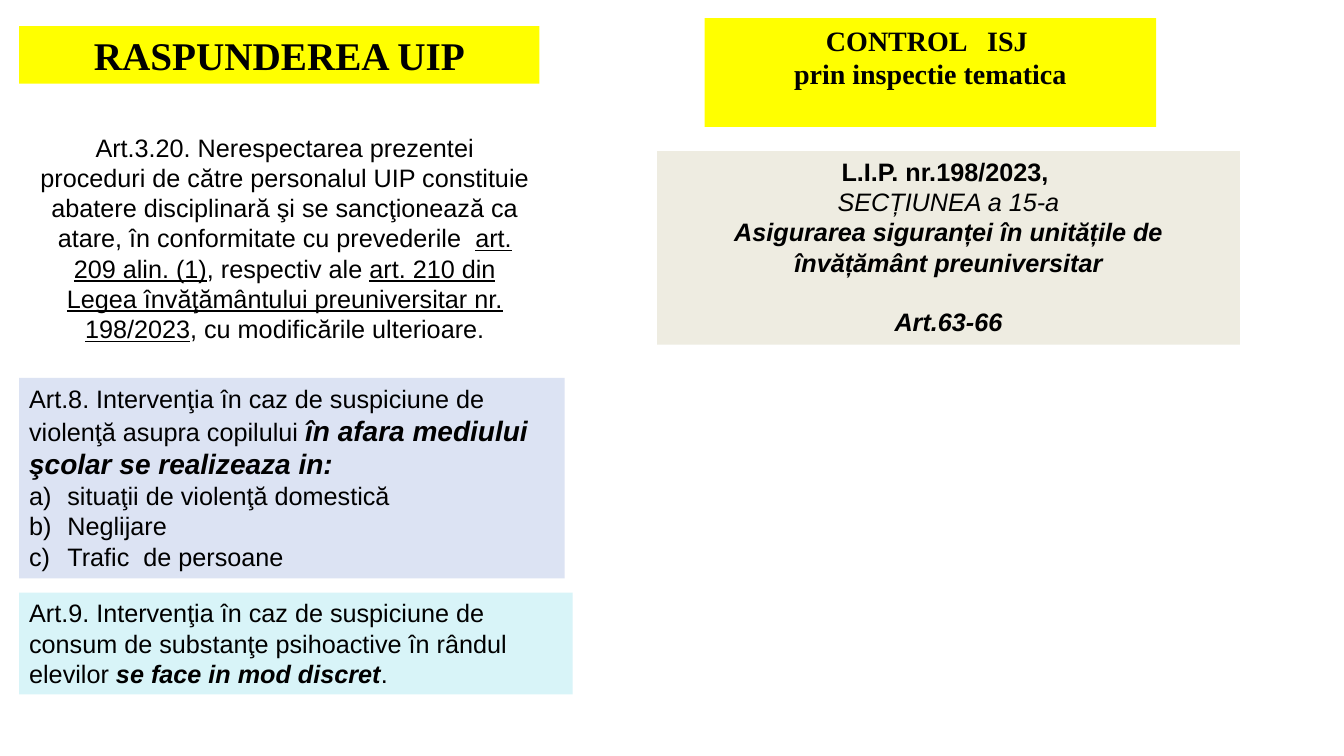
from dataclasses import dataclass

from lxml.etree import SubElement
from pptx import Presentation
from pptx.dml.color import RGBColor
from pptx.enum.shapes import MSO_AUTO_SHAPE_TYPE as ShapeType
from pptx.enum.text import MSO_ANCHOR as Anchor, PP_ALIGN as Align
from pptx.oxml.ns import qn
from pptx.util import Inches, Pt

BLACK = RGBColor(0x00, 0x00, 0x00)
WHITE = RGBColor(0xFF, 0xFF, 0xFF)
YELLOW = RGBColor(0xFF, 0xFF, 0x00)
BEIGE = RGBColor(0xEE, 0xEC, 0xE1)
LAVENDER = RGBColor(0xDC, 0xE3, 0xF3)
AQUA = RGBColor(0xD8, 0xF4, 0xF8)

BODY = {"name": "Arial", "size": Pt(18)}
TITLE = {"name": "Times New Roman", "size": Pt(28), "bold": True}
SUBTITLE = TITLE | {"size": Pt(20)}
BOLD = BODY | {"bold": True}
ITALIC = BODY | {"italic": True}
STRONG = BOLD | ITALIC
LARGE_STRONG = STRONG | {"size": Pt(20)}
UNDERLINED = BODY | {"underline": True}

LEFT_MARGIN = 1.43
LIST_INDENT = Inches(0.38)


@dataclass(frozen=True)
class Run:
    text: str
    style: dict


@dataclass(frozen=True)
class Line:
    runs: list[Run]
    lettered: bool = False
    space_before: float = 0


@dataclass(frozen=True)
class Panel:
    left: float
    top: float
    width: float
    height: float
    fill: RGBColor
    align: Align
    lines: list[Line]


PANELS = [
    Panel(2.25, 16.8, 37.87, 29.6, WHITE, Align.CENTER, [
        Line([
            Run("Art.3.20. Nerespectarea prezentei proceduri de către personalul UIP "
                "constituie abatere disciplinară şi se sancţionează ca atare, "
                "în conformitate cu prevederile  ", BODY),
            Run("art. 209 alin. (1)", UNDERLINED),
            Run(", respectiv ale ", BODY),
            Run("art. 210 din Legea învăţământului preuniversitar nr. 198/2023", UNDERLINED),
            Run(", cu modificările ulterioare.", BODY),
        ]),
    ]),
    Panel(LEFT_MARGIN, 3.47, 38.7, 7.6, YELLOW, Align.CENTER, [
        Line([Run("RASPUNDEREA UIP", TITLE)]),
    ]),
    Panel(52.43, 2.4, 33.6, 14.4, YELLOW, Align.CENTER, [
        Line([Run("CONTROL   ISJ ", SUBTITLE)]),
        Line([Run("prin inspectie tematica", SUBTITLE)]),
    ]),
    Panel(48.9, 20, 43.35, 25.6, BEIGE, Align.CENTER, [
        Line([Run("L.I.P. nr.198/2023, ", BOLD)]),
        Line([Run("SECȚIUNEA a 15-a", ITALIC)]),
        Line([Run("Asigurarea siguranței în unitățile de învățământ preuniversitar", STRONG)]),
        Line([Run("Art.63-66", STRONG)], space_before=21),
    ]),
    Panel(LEFT_MARGIN, 50, 40.58, 26.53, LAVENDER, Align.LEFT, [
        Line([
            Run("Art.8. Intervenţia în caz de suspiciune de violenţă asupra copilului ", BODY),
            Run("în afara mediului şcolar se realizeaza in:", LARGE_STRONG),
        ]),
        Line([Run("situaţii de violenţă domestică", BODY)], lettered=True),
        Line([Run("Neglijare", BODY)], lettered=True),
        Line([Run("Trafic  de persoane", BODY)], lettered=True),
    ]),
    Panel(LEFT_MARGIN, 78.4, 41.18, 13.47, AQUA, Align.LEFT, [
        Line([
            Run("Art.9. Intervenţia în caz de suspiciune de consum de substanţe "
                "psihoactive în rândul elevilor ", BODY),
            Run("se face in mod discret", STRONG),
            Run(".", BODY),
        ]),
    ]),
]


def write_line(paragraph, line: Line, align: Align) -> None:
    paragraph.alignment = align
    paragraph.space_before = Pt(line.space_before)
    if line.lettered:
        properties = paragraph._p.get_or_add_pPr()
        properties.set("marL", str(LIST_INDENT))
        properties.set("indent", str(-LIST_INDENT))
        SubElement(properties, qn("a:buAutoNum"), type="alphaLcParenR")
    for item in line.runs:
        run = paragraph.add_run()
        run.text = item.text
        run.font.color.rgb = BLACK
        for attribute, value in item.style.items():
            setattr(run.font, attribute, value)


def draw_panel(slide, panel: Panel, column: float, row: float) -> None:
    shape = slide.shapes.add_shape(
        ShapeType.RECTANGLE,
        round(panel.left * column), round(panel.top * row),
        round(panel.width * column), round(panel.height * row),
    )
    shape.shadow.inherit = False
    shape.fill.solid()
    shape.fill.fore_color.rgb = panel.fill
    shape.line.fill.background()
    frame = shape.text_frame
    frame.word_wrap = True
    frame.vertical_anchor = Anchor.TOP
    for index, line in enumerate(panel.lines):
        paragraph = frame.add_paragraph() if index else frame.paragraphs[0]
        write_line(paragraph, line, panel.align)


def main() -> None:
    presentation = Presentation()
    presentation.slide_width = Inches(13.33)
    presentation.slide_height = Inches(7.5)
    slide = presentation.slides.add_slide(presentation.slide_layouts[6])
    column = presentation.slide_width / 100
    row = presentation.slide_height / 100
    for panel in PANELS:
        draw_panel(slide, panel, column, row)
    presentation.save("out.pptx")


if __name__ == "__main__":
    main()
